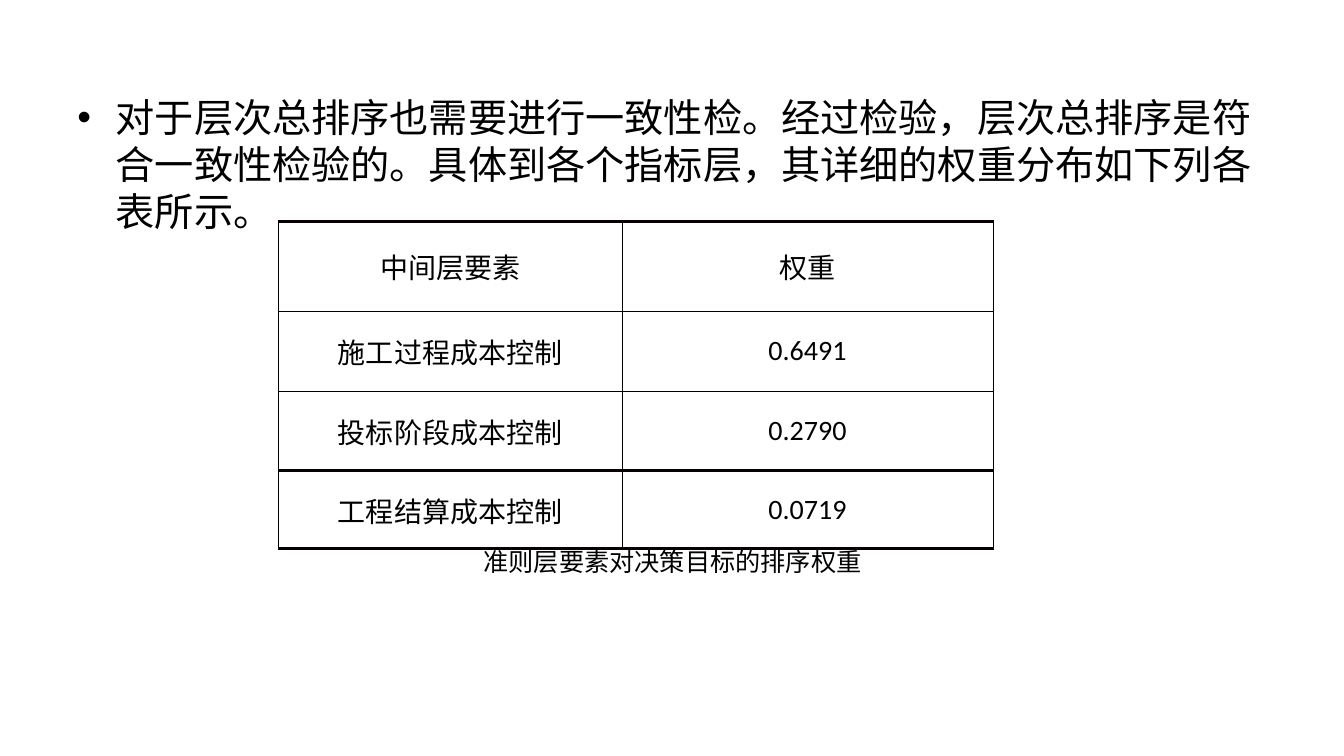
from lxml import etree
from pptx import Presentation
from pptx.dml.color import RGBColor
from pptx.enum.text import MSO_ANCHOR, PP_ALIGN
from pptx.oxml.ns import qn
from pptx.util import Inches, Pt

BLACK = RGBColor(0x00, 0x00, 0x00)
RULE = RGBColor(0x08, 0x00, 0x00)
LEFT, CENTER = PP_ALIGN.LEFT, PP_ALIGN.CENTER
MIDDLE = MSO_ANCHOR.MIDDLE
THIN = (BLACK, 0.75)
MID = (RULE, 1)
THICK = (RULE, 2.25)

BODY = {"name": "Arial", "size": Pt(28)}
NOTE = {"name": "Arial", "size": Pt(18)}
LABEL = {"name": "Karla", "size": Pt(20)}
VALUE = {"name": "Calibri", "size": Pt(20)}
CELL = {
    "vertical_anchor": MIDDLE,
    "margin_left": 0,
    "margin_top": 0,
    "margin_right": 0,
    "margin_bottom": 0,
}
INTRO = (
    "对于层次总排序也需要进行一致性检。经过检验，层次总排序是符合一致性检验的。"
    "具体到各个指标层，其详细的权重分布如下列各表所示。"
)
CAPTION = "准则层要素对决策目标的排序权重"
MAIN_ROWS = [
    ("中间层要素", "权重", 0.89, THICK, MID),
    ("施工过程成本控制", "0.6491", 0.79, MID, THIN),
    ("投标阶段成本控制", "0.2790", 0.79, THIN, THICK),
]
LAST_ROWS = [("工程结算成本控制", "0.0719", 0.76, MID, THICK)]


def set_all(target, values):
    for key, value in values.items():
        setattr(target, key, value)


def write(para, text, style, align):
    para.text = text
    para.alignment = align
    font = para.runs[0].font
    set_all(font, style)
    font.color.rgb = BLACK


def add_bullet(para):
    props = para._p.get_or_add_pPr()
    props.set("marL", str(Inches(0.38)))
    props.set("indent", str(Inches(-0.38)))
    font = etree.SubElement(props, qn("a:buFont"))
    font.set("typeface", "Arial")
    mark = etree.SubElement(props, qn("a:buChar"))
    mark.set("char", "•")


def add_text(slide, box, text, style, align):
    frame = slide.shapes.add_textbox(*map(Inches, box)).text_frame
    frame.word_wrap = True
    para = frame.paragraphs[0]
    write(para, text, style, align)
    return para


def add_edges(cell, top, bottom):
    props = cell._tc.get_or_add_tcPr()
    edges = {"lnL": THIN, "lnR": THIN, "lnT": top, "lnB": bottom}
    for tag, (color, width) in edges.items():
        line = etree.SubElement(props, qn(f"a:{tag}"), w=str(Pt(width)))
        fill = etree.SubElement(line, qn("a:solidFill"))
        etree.SubElement(fill, qn("a:srgbClr"), val=str(color))


def add_grid(slide, top, rows):
    height = sum(row[2] for row in rows)
    box = map(Inches, (2.76, top, 7.09, height))
    table = slide.shapes.add_table(len(rows), 2, *box).table
    set_all(table, {"first_row": False, "horz_banding": False})
    for column, width in zip(table.columns, (3.41, 3.68)):
        column.width = Inches(width)
    for row, (label, value, tall, above, below) in zip(table.rows, rows):
        row.height = Inches(tall)
        for cell, text in zip(row.cells, (label, value)):
            style = VALUE if text[0].isdigit() else LABEL
            write(cell.text_frame.paragraphs[0], text, style, CENTER)
            set_all(cell, CELL)
            add_edges(cell, above, below)
            cell.fill.background()


def main():
    deck = Presentation()
    set_all(deck, {"slide_width": Inches(13.33), "slide_height": Inches(7.5)})
    slide = deck.slides.add_slide(deck.slide_layouts[6])
    intro = add_text(slide, (0.67, 0.88, 12, 1.5), INTRO, BODY, LEFT)
    add_bullet(intro)
    add_text(slide, (0.67, 5.37, 12, 0.4), CAPTION, NOTE, CENTER)
    add_grid(slide, 2.2, MAIN_ROWS)
    add_grid(slide, 4.68, LAST_ROWS)
    deck.save("out.pptx")


if __name__ == "__main__":
    main()
